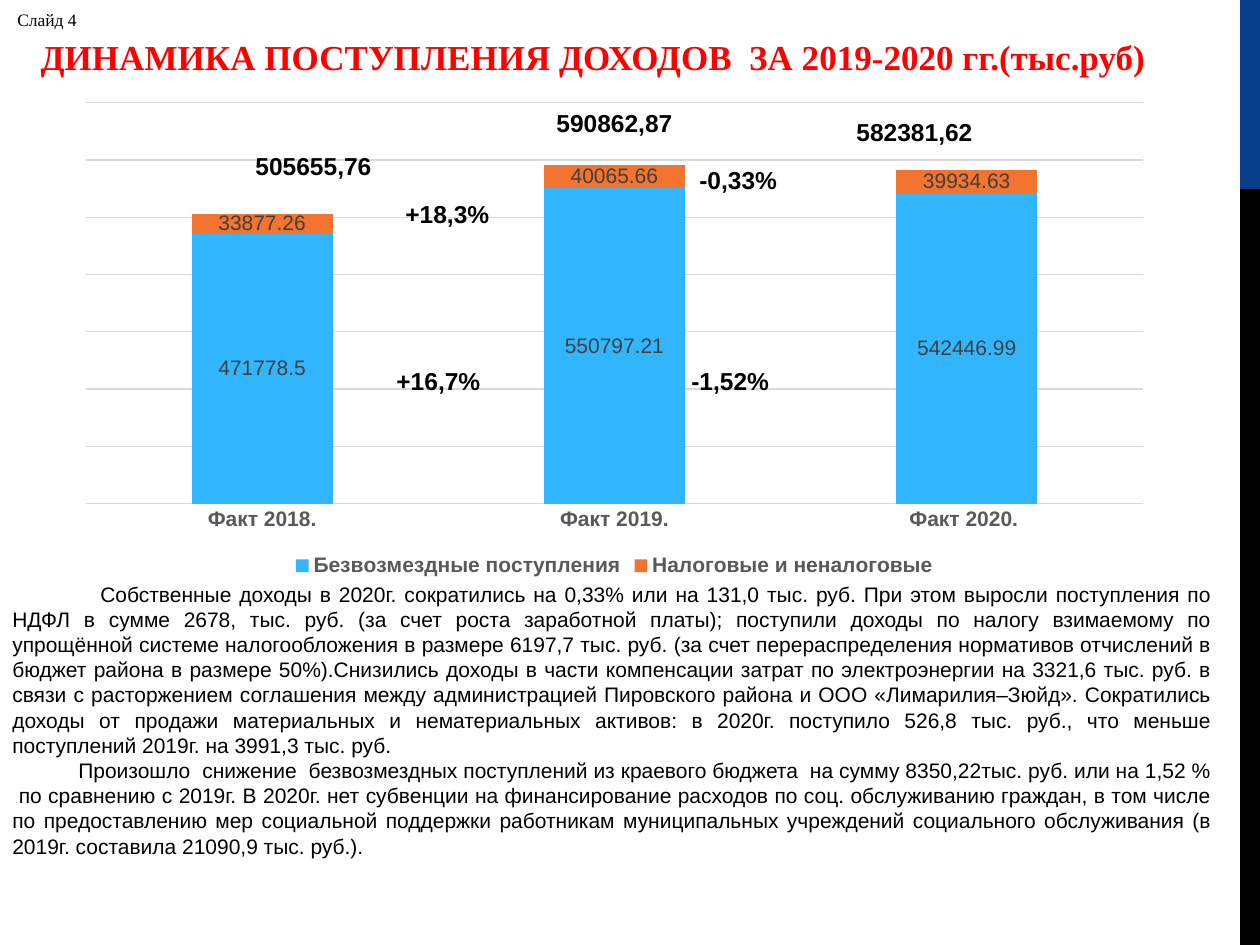
import pptx
import pptx.util
import pptx.oxml
import pptx.chart.data
import pptx.dml.color
import pptx.enum.chart
import pptx.enum.shapes
import pptx.enum.text
from dataclasses import dataclass

EMU_PER_PX = 914400 / 126


@dataclass(frozen=True)
class Theme:
    sans: str = "Arial"
    serif: str = "Times New Roman"
    black: str = "000000"
    navy: str = "073E87"
    red: str = "FF0000"
    blue: str = "31B6FD"
    orange: str = "F2742E"
    axis: str = "595959"
    label: str = "404040"
    grid: str = "D9D9D9"
    title_size: int = 20
    total_size: int = 14
    body_size: int = 12
    small_size: int = 10


THEME = Theme()

TITLE = "ДИНАМИКА ПОСТУПЛЕНИЯ ДОХОДОВ  ЗА 2019-2020 гг.(тыс.руб)"
CATEGORIES = ["Факт 2018.", "Факт 2019.", "Факт 2020. "]
SERIES = [
    ("Безвозмездные поступления", [471778.5, 550797.21, 542446.99], THEME.blue),
    ("Налоговые и неналоговые", [33877.26, 40065.66, 39934.63], THEME.orange),
]

# Text, left, top, width of each figure placed over the chart
FIGURES = [
    ("505655,76", 243, 145, 142),
    ("590862,87", 544, 102, 142),
    ("582381,62", 844, 111, 142),
    ("+18,3%", 393, 193, 110),
    ("+16,7%", 384, 360, 110),
    ("-0,33%", 687, 159, 103),
    ("-1,52%", 679, 360, 103),
]

# First-line indent and text
COMMENTS = [
    (88, "Собственные доходы в 2020г. сократились на 0,33% или на 131,0 тыс. руб. "
         "При этом выросли поступления по НДФЛ в сумме 2678, тыс. руб. (за счет роста "
         "заработной платы); поступили доходы по налогу взимаемому по упрощённой системе "
         "налогообложения в размере 6197,7 тыс. руб. (за счет перераспределения нормативов "
         "отчислений в бюджет района в размере 50%).Снизились доходы в части компенсации "
         "затрат по электроэнергии на 3321,6 тыс. руб. в связи с расторжением соглашения "
         "между администрацией Пировского района и ООО «Лимарилия–Зюйд». Сократились "
         "доходы от продажи материальных и нематериальных активов: в 2020г. поступило "
         "526,8 тыс. руб., что меньше поступлений 2019г. на 3991,3 тыс. руб."),
    (66, "Произошло  снижение  безвозмездных поступлений из краевого бюджета  на сумму "
         "8350,22тыс. руб. или на 1,52 %  по сравнению с 2019г. В 2020г. нет субвенции на "
         "финансирование расходов по соц. обслуживанию граждан, в том числе по "
         "предоставлению мер социальной поддержки работникам муниципальных учреждений "
         "социального обслуживания (в 2019г. составила 21090,9 тыс. руб.)."),
]


def px(length):
    return pptx.util.Emu(round(length * EMU_PER_PX))


def rgb(value):
    return pptx.dml.color.RGBColor.from_string(value)


def style_font(font, name, size, color, bold=False):
    font.name = name
    font.size = pptx.util.Pt(size)
    font.color.rgb = rgb(color)
    font.bold = bold


def add_band(page, left, top, width, height, color):
    band = page.shapes.add_shape(
        pptx.enum.shapes.MSO_SHAPE.RECTANGLE, px(left), px(top), px(width), px(height))
    band.shadow.inherit = False
    band.fill.solid()
    band.fill.fore_color.rgb = rgb(color)
    band.line.fill.background()


def set_title(page):
    title = page.shapes.title
    title.left, title.top, title.width, title.height = px(-69), px(29), px(1324), px(54)
    frame = title.text_frame
    frame.text = TITLE
    frame.auto_size = pptx.enum.text.MSO_AUTO_SIZE.NONE
    frame.vertical_anchor = pptx.enum.text.MSO_ANCHOR.TOP
    para = frame.paragraphs[0]
    para.alignment = pptx.enum.text.PP_ALIGN.CENTER
    style_font(para.runs[0].font, THEME.serif, THEME.title_size, THEME.red, True)


def add_label(page, text, left, top, width, height, name, size, bold):
    box = page.shapes.add_textbox(px(left), px(top), px(width), px(height))
    frame = box.text_frame
    frame.text = text
    frame.word_wrap = False
    frame.auto_size = pptx.enum.text.MSO_AUTO_SIZE.SHAPE_TO_FIT_TEXT
    style_font(frame.paragraphs[0].runs[0].font, name, size, THEME.black, bold)


def add_comments(page, left, top, width, height):
    box = page.shapes.add_textbox(px(left), px(top), px(width), px(height))
    frame = box.text_frame
    frame.word_wrap = True
    frame.auto_size = pptx.enum.text.MSO_AUTO_SIZE.SHAPE_TO_FIT_TEXT
    frame.text = "\n".join(text for _, text in COMMENTS)
    for para, (indent, _) in zip(frame.paragraphs, COMMENTS):
        para.alignment = pptx.enum.text.PP_ALIGN.JUSTIFY
        properties = para._p.get_or_add_pPr()
        properties.set("marL", "0")
        properties.set("indent", str(px(indent)))
        style_font(para.runs[0].font, THEME.sans, THEME.body_size, THEME.black)


def fix_plot_area(chart, x, y, w, h):
    """Set the inner plot area as fractions of the chart."""
    area = chart._chartSpace.chart.plotArea
    for old in area.xpath("c:layout"):
        area.remove(old)
    sizes = "".join(f'<c:{key} val="{value}"/>'
                    for key, value in (("x", x), ("y", y), ("w", w), ("h", h)))
    area.insert(0, pptx.oxml.parse_xml(
        '<c:layout xmlns:c="http://schemas.openxmlformats.org/drawingml/2006/chart">'
        '<c:manualLayout><c:layoutTarget val="inner"/><c:xMode val="edge"/>'
        f'<c:yMode val="edge"/>{sizes}</c:manualLayout></c:layout>'))


def add_income_chart(page, left, top, width, height):
    data = pptx.chart.data.CategoryChartData()
    data.categories = CATEGORIES
    for name, values, _ in SERIES:
        data.add_series(name, values)
    chart = page.shapes.add_chart(
        pptx.enum.chart.XL_CHART_TYPE.COLUMN_STACKED,
        px(left), px(top), px(width), px(height), data).chart
    chart.has_title = False
    style_font(chart.font, THEME.sans, THEME.small_size, THEME.black)
    fix_plot_area(chart, 0.02, 0.02, 0.96, 0.82)

    # Columns and their values
    plot = chart.plots[0]
    plot.gap_width, plot.overlap = 150, 100
    plot.vary_by_categories = False
    for series, (_, _, color) in zip(plot.series, SERIES):
        series.format.fill.solid()
        series.format.fill.fore_color.rgb = rgb(color)
        labels = series.data_labels
        labels.show_value = True
        style_font(labels.font, THEME.sans, THEME.body_size, THEME.label)

    # Axes
    months = chart.category_axis
    months.major_tick_mark = pptx.enum.chart.XL_TICK_MARK.NONE
    months.format.line.fill.background()
    style_font(months.tick_labels.font, THEME.sans, THEME.body_size, THEME.axis, True)
    amounts = chart.value_axis
    amounts.visible = False
    amounts.minimum_scale, amounts.maximum_scale, amounts.major_unit = 0, 700000, 100000
    amounts.has_major_gridlines = True
    grid_line = amounts.major_gridlines.format.line
    grid_line.color.rgb = rgb(THEME.grid)
    grid_line.width = pptx.util.Pt(0.75)

    # Legend
    chart.has_legend = True
    chart.legend.position = pptx.enum.chart.XL_LEGEND_POSITION.BOTTOM
    chart.legend.include_in_layout = False
    style_font(chart.legend.font, THEME.sans, THEME.body_size, THEME.axis, True)


def main():
    deck = pptx.Presentation()
    deck.slide_width, deck.slide_height = px(1260), px(945)
    page = deck.slides.add_slide(deck.slide_layouts[5])

    # Side stripe
    add_band(page, 1240, 0, 20, 189, THEME.navy)
    add_band(page, 1240, 189, 20, 756, THEME.black)

    # Commentary and headings
    add_comments(page, 0, 575, 1225, 318)
    set_title(page)
    add_label(page, "Слайд 4", 5, 3, 86, 34, THEME.serif, THEME.small_size, False)

    # Chart with totals and changes
    add_income_chart(page, 64, 93, 1101, 489)
    for text, left, top, width in FIGURES:
        add_label(page, text, left, top, width, 43, THEME.sans, THEME.total_size, True)

    deck.save("out.pptx")


if __name__ == "__main__":
    main()
